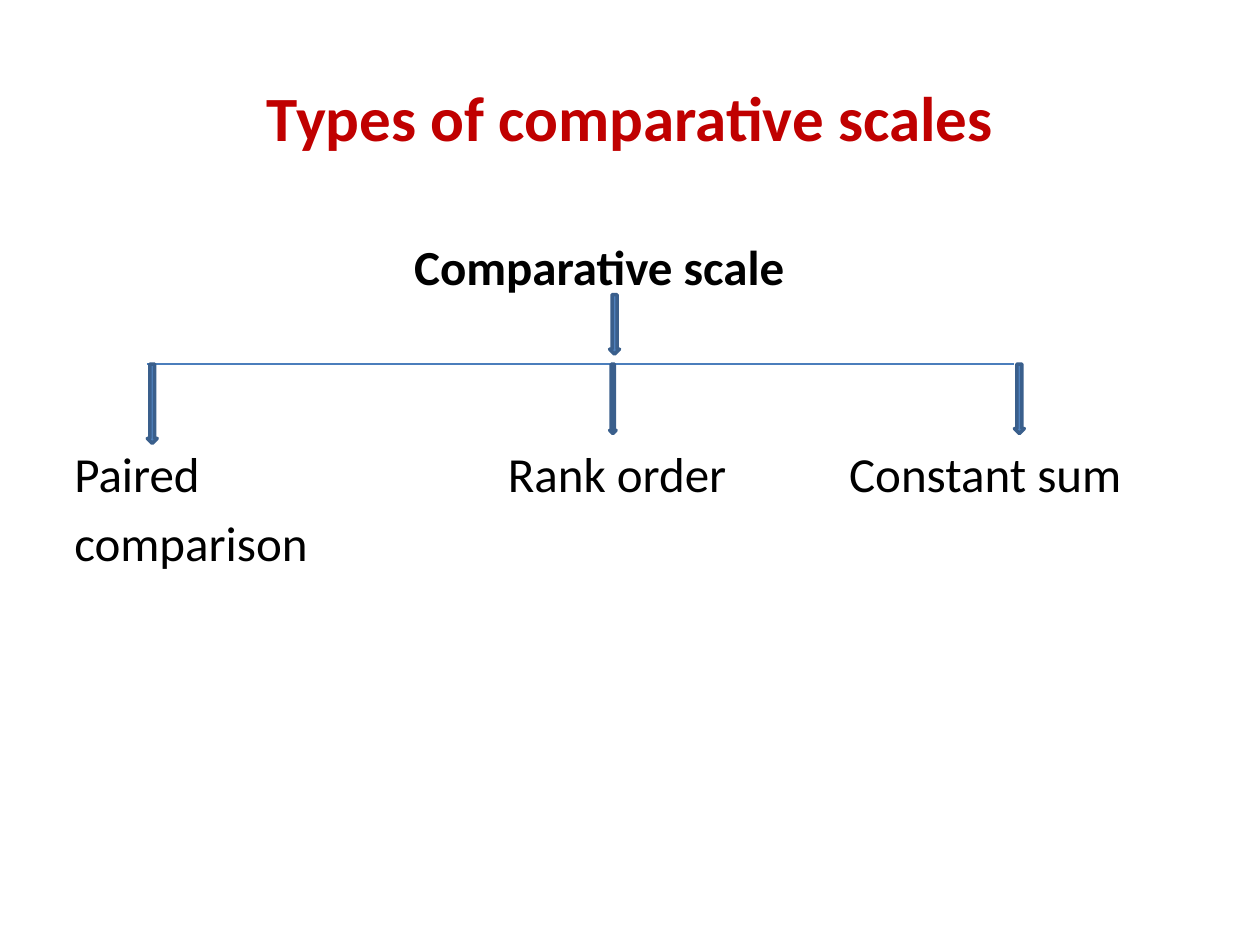
from lxml import etree
from pptx import Presentation
from pptx.dml.color import RGBColor
from pptx.enum.shapes import MSO_CONNECTOR, MSO_SHAPE
from pptx.enum.text import MSO_ANCHOR, PP_ALIGN
from pptx.oxml.ns import qn
from pptx.util import Cm, Pt

RED = RGBColor(0xC0, 0x00, 0x00)
BLACK = RGBColor(0x00, 0x00, 0x00)
BLUE = RGBColor(0x4F, 0x81, 0xBD)
DARK_BLUE = RGBColor(0x3A, 0x5F, 0x8C)
LINE_BLUE = RGBColor(0x4B, 0x7E, 0xBC)

STRAIGHT = MSO_CONNECTOR.STRAIGHT
DOWN_ARROW = MSO_SHAPE.DOWN_ARROW
LEFT, CENTER = PP_ALIGN.LEFT, PP_ALIGN.CENTER
TOP, MIDDLE = MSO_ANCHOR.TOP, MSO_ANCHOR.MIDDLE


class Canvas:
    """Draws on one slide in one style; lengths are centimetres."""

    font = "Calibri"

    def __init__(self, slide):
        self.slide = slide

    def text(self, lines, x, y, w, h, size=28, bold=False, color=BLACK,
             align=LEFT, anchor=TOP):
        sp = self.slide.shapes.add_textbox(Cm(x), Cm(y), Cm(w), Cm(h))
        tf = sp.text_frame
        tf.word_wrap = True
        tf.vertical_anchor = anchor
        tf.margin_left = tf.margin_right = tf.margin_top = tf.margin_bottom = 0
        for i, line in enumerate(lines):
            p = tf.add_paragraph() if i else tf.paragraphs[0]
            p.text = line
            p.alignment = align
            p.space_before = Pt(size * 0.2 if i else 0)
            p.font.name = self.font
            p.font.size = Pt(size)
            p.font.bold = bold
            p.font.color.rgb = color

    def arrow(self, x, y, w, h):
        sp = self.slide.shapes.add_shape(DOWN_ARROW, Cm(x), Cm(y), Cm(w), Cm(h))
        sp.shadow.inherit = False
        sp.fill.solid()
        sp.fill.fore_color.rgb = BLUE
        sp.line.color.rgb = DARK_BLUE
        sp.line.width = Pt(2)

    def line(self, x1, y1, x2, y2):
        cn = self.slide.shapes.add_connector(
            STRAIGHT, Cm(x1), Cm(y1), Cm(x2), Cm(y2))
        cn.line.color.rgb = LINE_BLUE
        cn.line.width = Pt(0.75)
        etree.SubElement(cn._element.spPr, qn("a:effectLst"))


def main():
    prs = Presentation()
    prs.slide_width, prs.slide_height = Cm(25.4), Cm(19.05)
    canvas = Canvas(prs.slides.add_slide(prs.slide_layouts[6]))

    # Title and root of the tree
    canvas.text(["Types of comparative scales"], 1.27, 0.76, 22.86, 3.18,
                size=36, bold=True, color=RED, align=CENTER, anchor=MIDDLE)
    canvas.text(["Comparative scale"], 8.35, 4.76, 9, 1.2, bold=True)

    # Branches: label, label left, arrow left, arrow width, arrow height
    bar_y, label_y = 7.34, 8.94
    branches = [
        (["Paired", "comparison"], 1.5, 2.97, 0.2, 1.6),
        (["Rank order"], 10.24, 12.29, 0.13, 1.4),
        (["Constant sum"], 17.12, 20.45, 0.2, 1.4),
    ]
    canvas.line(branches[0][2], bar_y, branches[-1][2], bar_y)
    for label, label_x, arrow_x, w, h in branches:
        canvas.text(label, label_x, label_y, 6.5, 1.3 * len(label))
        canvas.arrow(arrow_x, bar_y, w, h)

    # Arrow from the root to the bar
    canvas.arrow(12.29, 5.94, 0.2, 1.2)

    prs.save("out.pptx")


if __name__ == "__main__":
    main()
